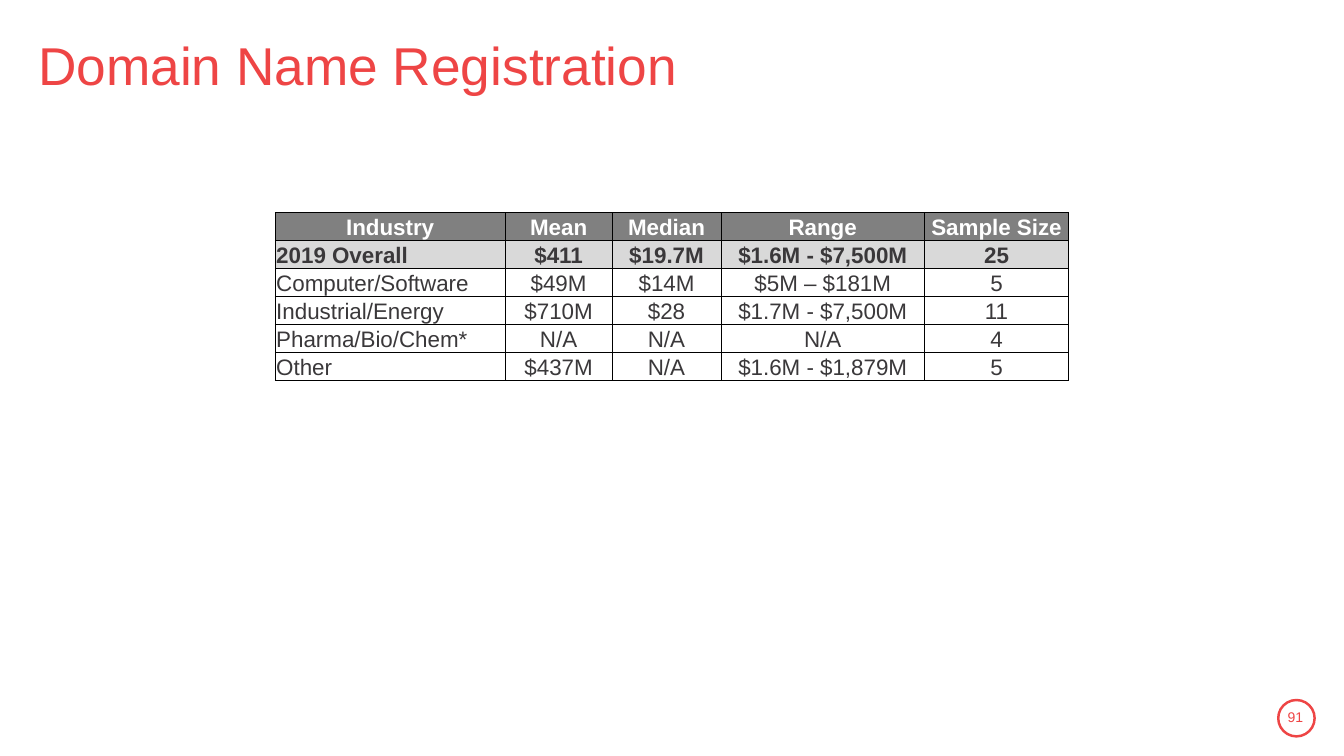
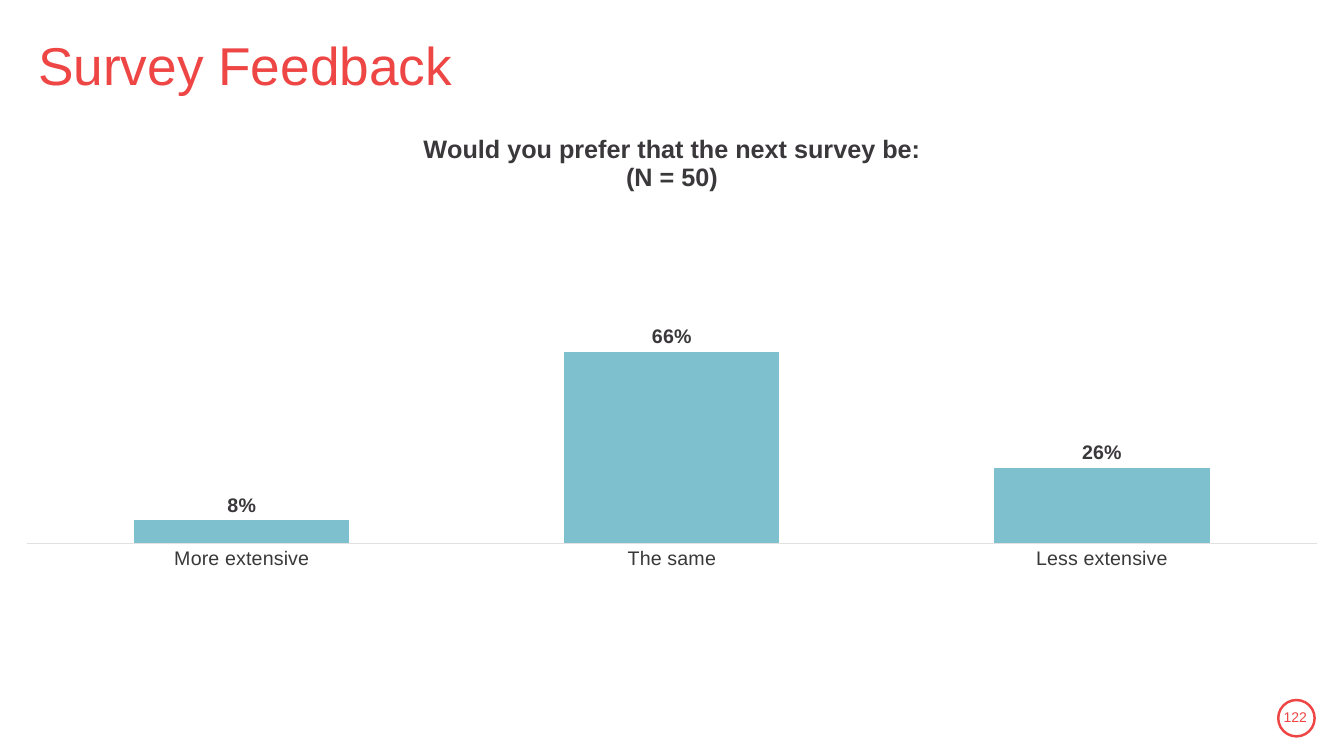
from dataclasses import dataclass

from lxml import etree
from pptx import Presentation
from pptx import util as u
from pptx.chart import data as cd
from pptx.dml.color import RGBColor
from pptx.enum import chart as ch, shapes, text
from pptx.oxml import ns


@dataclass(frozen=True)
class Theme:
    font: str = "Arial"
    accent: str = "EE4545"
    ink: str = "3A383A"
    white: str = "FFFFFF"
    header: str = "808080"
    total: str = "D9D9D9"
    border: str = "000000"
    axis: str = "E2E1E2"
    bar: str = "7FC0CF"
    title_pt: int = 38
    heading_pt: int = 18
    table_pt: int = 16
    chart_pt: int = 14
    number_pt: int = 10


def rgb(value):
    return RGBColor.from_string(value)


class Deck:
    COLS, ROWS = 48, 27

    def __init__(self, theme):
        self.theme = theme
        self.prs = Presentation()
        self.prs.slide_width = u.Inches(13.33)
        self.prs.slide_height = u.Inches(7.5)
        self.s = None

    def col(self, n):
        return round(self.prs.slide_width * n / self.COLS)

    def row(self, n):
        return round(self.prs.slide_height * n / self.ROWS)

    def box(self, left, top, width, height):
        return self.col(left), self.row(top), self.col(width), self.row(height)

    def style(self, font, size, color, bold=False):
        font.name = self.theme.font
        font.size = u.Pt(size)
        font.bold = bold
        font.color.rgb = rgb(color)

    def put_text(self, tf, content, size, color, bold=False, align=text.PP_ALIGN.CENTER):
        tf.text = content
        for p in tf.paragraphs:
            p.alignment = align
            for r in p.runs:
                self.style(r.font, size, color, bold)

    def slide(self, title, number):
        self.s = self.prs.slides.add_slide(self.prs.slide_layouts[5])
        self.title(title)
        self.page_number(number)

    def title(self, content):
        sp = self.s.shapes.title
        sp.left, sp.top, sp.width, sp.height = self.box(1, 0.86, 46.15, 3.13)
        tf = sp.text_frame
        tf.auto_size = text.MSO_AUTO_SIZE.NONE
        tf.vertical_anchor = text.MSO_ANCHOR.MIDDLE
        self.put_text(tf, content, self.theme.title_pt, self.theme.accent,
                      align=text.PP_ALIGN.LEFT)
        tf.paragraphs[0].line_spacing = 0.9

    def page_number(self, number):
        ring = self.s.shapes.add_shape(shapes.MSO_SHAPE.OVAL, *self.box(45.65, 25, 1.3, 1.3))
        ring.shadow.inherit = False
        ring.fill.background()
        ring.line.color.rgb = rgb(self.theme.accent)
        ring.line.width = u.Pt(1.75)
        tf = self.s.shapes.add_textbox(*self.box(45.43, 24.88, 1.66, 1.44)).text_frame
        tf.word_wrap = True
        tf.margin_left = tf.margin_right = 0
        tf.vertical_anchor = text.MSO_ANCHOR.MIDDLE
        self.put_text(tf, str(number), self.theme.number_pt, self.theme.accent)

    def cell_border(self, cell):
        tc_pr = cell._tc.get_or_add_tcPr()
        for side in ("lnL", "lnR", "lnT", "lnB"):
            ln = etree.SubElement(tc_pr, ns.qn(f"a:{side}"), w=str(u.Pt(0.5)))
            fill = etree.SubElement(ln, ns.qn("a:solidFill"))
            etree.SubElement(fill, ns.qn("a:srgbClr"), val=self.theme.border)

    def table(self, left, top, widths, row_height, rows):
        th = self.theme
        area = self.box(left, top, sum(widths), row_height * len(rows))
        tbl = self.s.shapes.add_table(len(rows), len(widths), *area).table
        tbl.first_row = tbl.horz_banding = False
        for column, width in zip(tbl.columns, widths):
            column.width = self.col(width)
        looks = {0: (th.header, th.white, True), 1: (th.total, th.ink, True)}
        for i, values in enumerate(rows):
            tbl.rows[i].height = self.row(row_height)
            fill, color, bold = looks.get(i, (None, th.ink, False))
            for j, value in enumerate(values):
                cell = tbl.cell(i, j)
                cell.margin_left = cell.margin_right = cell.margin_top = u.Inches(0.01)
                cell.margin_bottom = 0
                cell.vertical_anchor = text.MSO_ANCHOR.BOTTOM
                self.cell_border(cell)
                if fill:
                    cell.fill.solid()
                    cell.fill.fore_color.rgb = rgb(fill)
                else:
                    cell.fill.background()
                label = i > 0 and j == 0
                align = text.PP_ALIGN.LEFT if label else text.PP_ALIGN.CENTER
                self.put_text(cell.text_frame, value, th.table_pt, color, bold, align)

    def plot_layout(self, chart, **shares):
        area = chart._chartSpace.chart.plotArea
        for old in area.findall(ns.qn("c:layout")):
            area.remove(old)
        layout = etree.Element(ns.qn("c:layout"))
        manual = etree.SubElement(layout, ns.qn("c:manualLayout"))
        settings = {"layoutTarget": "inner", "xMode": "edge", "yMode": "edge", **shares}
        for tag, value in settings.items():
            etree.SubElement(manual, ns.qn(f"c:{tag}"), val=str(value))
        area.insert(0, layout)

    def column_chart(self, area, heading, points):
        th = self.theme
        data = cd.CategoryChartData(number_format="0%")
        data.categories = list(points)
        data.add_series("Series 1", list(points.values()))
        chart = self.s.shapes.add_chart(
            ch.XL_CHART_TYPE.COLUMN_CLUSTERED, *self.box(*area), data).chart
        self.style(chart.font, th.chart_pt, th.ink)
        chart.has_legend = False
        self.put_text(chart.chart_title.text_frame, heading, th.heading_pt, th.ink, True)
        self.plot_layout(chart, x=0.02, y=0.22, w=0.96, h=0.45)

        values = chart.value_axis
        values.minimum_scale, values.maximum_scale, values.major_unit = 0, 1, 0.2
        values.has_major_gridlines = False
        values.visible = False
        cats = chart.category_axis
        cats.major_tick_mark = ch.XL_TICK_MARK.NONE
        cats.format.line.color.rgb = rgb(th.axis)
        cats.format.line.width = u.Pt(0.75)
        self.style(cats.tick_labels.font, th.chart_pt, th.ink)

        plot = chart.plots[0]
        plot.gap_width = 100
        plot.vary_by_categories = False
        fill = plot.series[0].format.fill
        fill.solid()
        fill.fore_color.rgb = rgb(th.bar)
        plot.has_data_labels = True
        labels = plot.data_labels
        labels.show_value = True
        labels.number_format = "0%"
        labels.number_format_is_linked = False
        labels.position = ch.XL_LABEL_POSITION.OUTSIDE_END
        self.style(labels.font, th.chart_pt, th.ink, True)


def main():
    deck = Deck(Theme())

    deck.slide("Domain Name Registration", 91)
    deck.table(9.83, 7.6, (8.21, 3.82, 3.89, 7.27, 5.15), 0.76, (
        ("Industry", "Mean", "Median", "Range", "Sample Size"),
        ("2019 Overall", "$411", "$19.7M", "$1.6M - $7,500M", "25"),
        ("Computer/Software", "$49M", "$14M", "$5M – $181M", "5"),
        ("Industrial/Energy", "$710M", "$28", "$1.7M - $7,500M", "11"),
        ("Pharma/Bio/Chem*", "N/A", "N/A", "N/A", "4"),
        ("Other", "$437M", "N/A", "$1.6M - $1,879M", "5"),
    ))

    deck.slide("Survey Feedback", 122)
    deck.column_chart(
        (0, 4, Deck.COLS, Deck.ROWS - 4),
        "Would you prefer that the next survey be:\n(N = 50)",
        {"More extensive": 0.08, "The same": 0.66, "Less extensive": 0.26})

    deck.prs.save("out.pptx")


if __name__ == "__main__":
    main()
